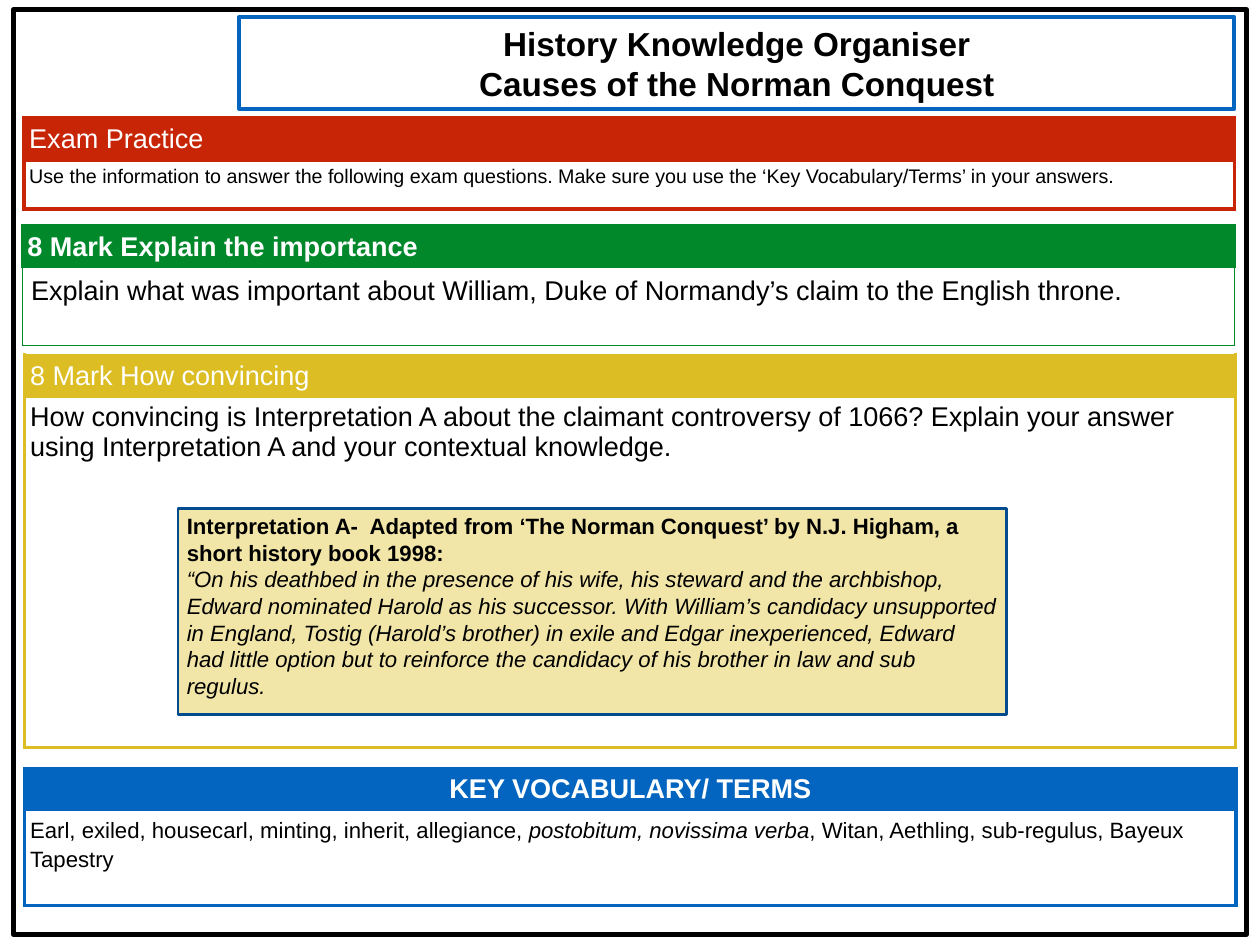
from dataclasses import dataclass

from lxml.etree import SubElement
from pptx import Presentation
from pptx.dml.color import RGBColor
from pptx.enum.shapes import MSO_SHAPE as Shape
from pptx.enum.text import MSO_ANCHOR as Anchor, MSO_AUTO_SIZE as AutoSize, PP_ALIGN as Align
from pptx.oxml.ns import qn
from pptx.util import Inches, Pt


@dataclass(frozen=True)
class Theme:
    font: str = "Arial"
    black: str = "000000"
    white: str = "FFFFFF"
    blue: str = "0365C0"
    navy: str = "024B8E"
    green: str = "00882B"
    red: str = "C82506"
    gold: str = "DCBD23"
    cream: str = "F1E5A7"
    title: int = 27
    heading: int = 22
    passage: int = 18
    note: int = 16


THEME = Theme()


def set_all(target, values):
    for name, value in values.items():
        setattr(target, name, value)


def paint(target, color):
    target.solid()
    target.fore_color.rgb = RGBColor.from_string(color)


def outline(shape, color, width):
    paint(shape.line.fill, color)
    shape.line.width = Pt(width)


def inset(target, margin):
    sides = ("margin_left", "margin_top", "margin_right", "margin_bottom")
    set_all(target, dict.fromkeys(sides, Inches(margin)))


def write(frame, paragraphs, size, color=THEME.black, layout=None):
    for index, spans in enumerate(paragraphs):
        para = frame.add_paragraph() if index else frame.paragraphs[0]
        set_all(para, {"alignment": Align.LEFT, **(layout or {})})
        for text, style in spans:
            span = para.add_run()
            span.text = text
            set_all(span.font, {"name": THEME.font, "size": Pt(size),
                                "bold": False, "italic": False, **style})
            span.font.color.rgb = RGBColor.from_string(color)


def add_box(page, place, line, fill=None):
    box = page.shapes.add_shape(Shape.RECTANGLE, *map(Inches, place))
    box.shadow.inherit = False
    if fill:
        paint(box.fill, fill)
    else:
        box.fill.background()
    outline(box, *line)
    return box


def add_title(page, place, lines):
    title = page.shapes.title
    set_all(title, dict(zip(("left", "top", "width", "height"), map(Inches, place))))
    outline(title, THEME.blue, 3)
    frame = title.text_frame
    set_all(frame, {"word_wrap": True, "auto_size": AutoSize.NONE,
                    "vertical_anchor": Anchor.MIDDLE})
    inset(frame, 0.06)
    write(frame, [[(line, {"bold": True})] for line in lines], THEME.title,
          layout={"alignment": Align.CENTER})


def add_borders(cell, color, widths):
    properties = cell._tc.get_or_add_tcPr()
    for side, width in zip("LRTB", widths):
        border = SubElement(properties, qn(f"a:ln{side}"), w=str(Pt(width)))
        fill = SubElement(border, qn("a:solidFill"))
        SubElement(fill, qn("a:srgbClr"), val=color)


def add_section(page, place, rows, color, heading, spans, size=THEME.heading,
                bold=True, margin=0.06, rule=3, heading_layout=None, body_layout=None):
    left, top, width = place
    table = page.shapes.add_table(2, 1, *map(Inches, (left, top, width, sum(rows)))).table
    set_all(table, {"first_row": False, "horz_banding": False})
    for row, height in zip(table.rows, rows):
        row.height = Inches(height)
    head, body = table.cell(0, 0), table.cell(1, 0)
    for cell, fill, widths, gap in ((head, color, (3, 3, 3, rule), 0.06),
                                    (body, THEME.white, (rule,) * 4, margin)):
        add_borders(cell, color, widths)
        paint(cell.fill, fill)
        inset(cell, gap)
    head.vertical_anchor = Anchor.MIDDLE
    write(head.text_frame, [[(heading, {"bold": bold})]], THEME.heading,
          THEME.white, heading_layout)
    write(body.text_frame, [spans], size, layout=body_layout)


def add_passage(page, place, paragraphs):
    box = add_box(page, place, (THEME.navy, 2), THEME.cream)
    frame = box.text_frame
    set_all(frame, {"word_wrap": True, "vertical_anchor": Anchor.TOP})
    write(frame, paragraphs, THEME.passage)


def main():
    deck = Presentation()
    set_all(deck, {"slide_width": Inches(14.22), "slide_height": Inches(10.67)})
    page = deck.slides.add_slide(deck.slide_layouts[5])

    add_box(page, (0.15, 0.11, 13.92, 10.44), (THEME.black, 4))
    add_title(page, (2.7, 0.19, 11.23, 1.04),
              ["History Knowledge Organiser", "Causes of the Norman Conquest"])
    add_section(page, (0.28, 8.68, 13.67), (0.46, 1.08), THEME.blue,
                "KEY VOCABULARY/ TERMS",
                [("Earl, exiled, housecarl, minting, inherit, allegiance, ", {}),
                 ("postobitum, novissima verba", {"italic": True}),
                 (", Witan, Aethling, sub-regulus, Bayeux Tapestry", {})],
                THEME.passage, heading_layout={"alignment": Align.CENTER},
                body_layout={"line_spacing": 1.15, "space_before": Pt(8)})
    add_section(page, (0.25, 2.55, 13.68), (0.47, 0.88), THEME.green,
                "8 Mark Explain the importance",
                [("Explain what was important about William, Duke of Normandy’s "
                  "claim to the English throne.", {})],
                margin=0.1, rule=0.75)
    add_section(page, (0.27, 1.33, 13.66), (0.48, 0.55), THEME.red, "Exam Practice",
                [("Use the information to answer the following exam questions. Make sure "
                  "you use the ‘Key Vocabulary/Terms’ in your answers.", {})],
                THEME.note, bold=False)
    add_section(page, (0.28, 4.01, 13.66), (0.47, 3.96), THEME.gold,
                "8 Mark How convincing",
                [("How convincing is Interpretation A about the claimant controversy of "
                  "1066? Explain your answer using Interpretation A and your contextual "
                  "knowledge.", {})], bold=False)
    add_passage(page, (2.01, 5.74, 9.35, 2.33), [
        [("Interpretation A-  Adapted from ‘The Norman Conquest’ by N.J. Higham, "
          "a short history book 1998:", {"bold": True})],
        [("“On his deathbed in the presence of his wife, his steward and the archbishop, "
          "Edward nominated Harold as his successor. With William’s candidacy unsupported "
          "in England, Tostig (Harold’s brother) in exile and Edgar inexperienced, Edward "
          "had little option but to reinforce the candidacy of his brother in law and sub "
          "regulus.", {"italic": True})]])
    deck.save("out.pptx")


if __name__ == "__main__":
    main()
